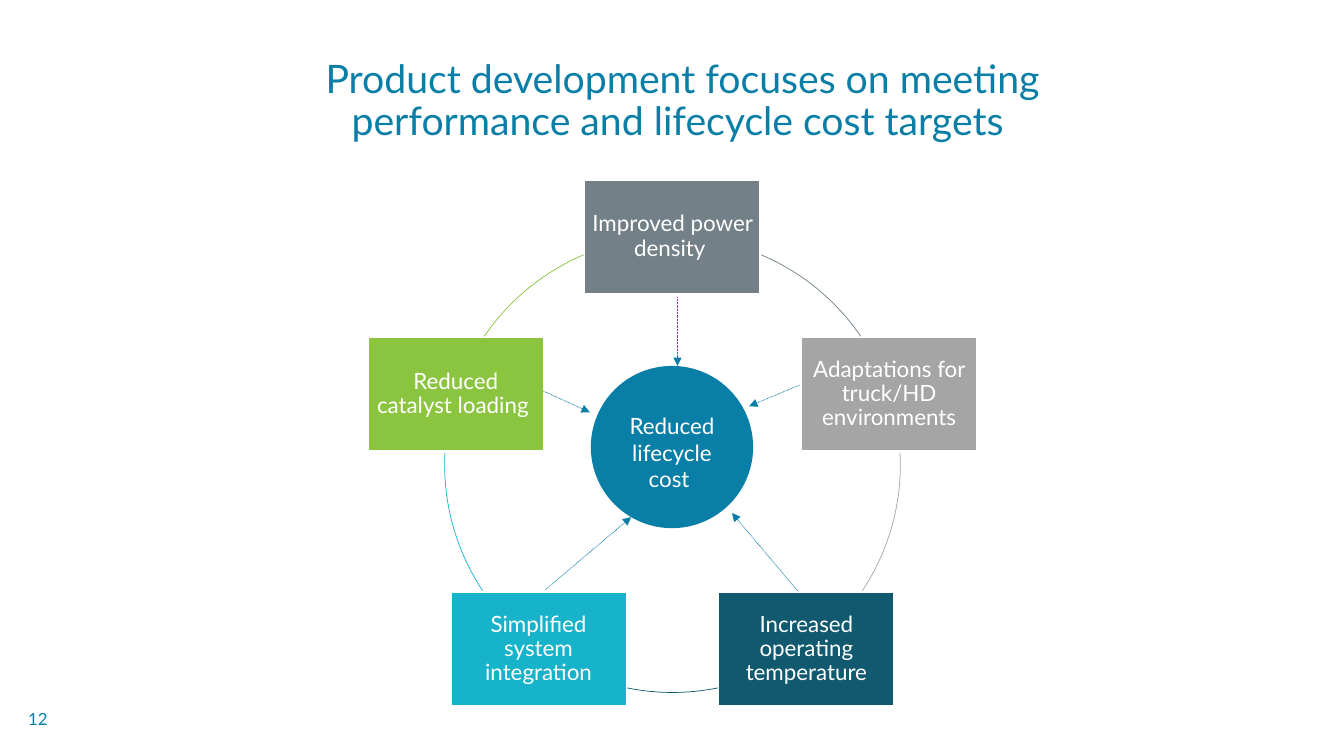
import math

from lxml import etree
from pptx import Presentation
from pptx import util as u
from pptx.dml.color import RGBColor
from pptx.enum import dml, shapes, text
from pptx.oxml.ns import qn

BLUE, WHITE = "097EA6", "FFFFFF"
NODES = [
    ("Improved power density ", "738088"),
    ("Adaptations for truck/HD environments", "A5A5A5"),
    ("Increased operating temperature", "11596F"),
    ("Simplified system integration", "16B3CA"),
    ("Reduced catalyst loading ", "8BC540"),
]
# Start and end angle of the arc after each node, clockwise from the right
ARCS = [(292.9, 325.7), (357, 33.6), (78.5, 101.5), (146.4, 183), (214.3, 247.1)]
# Arrow ends, relative to the centre of the ring
ARROWS = [
    (6, -166, 6, -98),
    (-125, 124, -40, 52),
    (125, 125, 60, 48),
    (-127, -73, -81, -52),
    (127, -79, 77, -58),
]


def px(n):
    """Turn px, 100 to the inch, into EMU."""
    return u.Emu(round(n * 9144))


def color(code):
    return RGBColor.from_string(code)


def write(shape, lines, size=16, ink=WHITE, space=None, inset=(7, 7, 7, 7),
          anchor=text.MSO_ANCHOR.MIDDLE):
    frame = shape.text_frame
    frame.word_wrap = True
    frame.vertical_anchor = anchor
    frame.margin_left, frame.margin_top, frame.margin_right, frame.margin_bottom = map(px, inset)
    frame.text = lines
    for para in frame.paragraphs:
        para.alignment = text.PP_ALIGN.CENTER
        para.line_spacing = space
        para.font.size = u.Pt(size)
        para.font.name = "Lato"
        para.font.color.rgb = color(ink)


def label(slide, box, lines, **form):
    write(slide.shapes.add_textbox(*map(px, box)), lines, inset=(10, 5, 10, 5), **form)


def draw(slide, kind, box, fill=None, line=None, width=1):
    shape = slide.shapes.add_shape(kind, *map(px, box))
    shape.shadow.inherit = False
    if fill:
        shape.fill.solid()
        shape.fill.fore_color.rgb = color(fill)
    else:
        shape.fill.background()
    if line:
        shape.line.color.rgb = color(line)
        shape.line.width = u.Pt(width)
    else:
        shape.line.fill.background()
    return shape


def arrow(slide, start, end):
    link = slide.shapes.add_connector(shapes.MSO_CONNECTOR.STRAIGHT, *map(px, start + end))
    link.line.color.rgb = color(BLUE)
    link.line.width = u.Pt(0.5)
    link.line.dash_style = dml.MSO_LINE.ROUND_DOT
    etree.SubElement(link.line._get_or_add_ln(), qn("a:tailEnd"), type="triangle")
    etree.SubElement(link._element.spPr, qn("a:effectLst"))


def cycle(slide, box):
    """Place the nodes evenly on a ring, with arcs between them."""
    left, top, size, _ = box
    ray = size / 2
    wide, high = 174, 113
    for i, ((name, fill), ends) in enumerate(zip(NODES, ARCS)):
        turn = math.radians(72 * i - 90)
        x = left + ray + ray * math.cos(turn)
        y = top + ray + ray * math.sin(turn)
        node = draw(slide, shapes.MSO_SHAPE.RECTANGLE,
                    (x - wide / 2, y - high / 2, wide, high), fill, WHITE)
        write(node, name, space=0.9)
        arc = draw(slide, shapes.MSO_SHAPE.ARC, box, line=fill, width=0.5)
        for k, angle in enumerate(ends):
            arc.adjustments[k] = angle * 0.6  # 60000 units to the degree


def hub(slide, box):
    """Place the central goal and the arrows that lead to it."""
    left, top, size, _ = box
    x, y = left + size // 2, top + size // 2 + 18
    goal = draw(slide, shapes.MSO_SHAPE.OVAL, box, BLUE)
    write(goal, "Reduced\nlifecycle\ncost ", inset=(0, 10, 0, 0))
    for a, b, c, d in ARROWS:
        arrow(slide, (x + a, y + b), (x + c, y + d))


def main():
    deck = Presentation()
    deck.slide_width, deck.slide_height = px(1333), px(750)
    slide = deck.slides.add_slide(deck.slide_layouts[6])
    label(slide, (0, 698, 75, 30), "12", size=12, ink=BLUE, anchor=text.MSO_ANCHOR.TOP)
    label(slide, (247, 42, 860, 118),
          "Product development focuses on meeting performance and lifecycle cost targets ",
          size=28, ink=BLUE, space=0.9)
    cycle(slide, (441, 235, 452, 452))
    hub(slide, (586, 363, 161, 161))
    deck.save("out.pptx")


if __name__ == "__main__":
    main()
